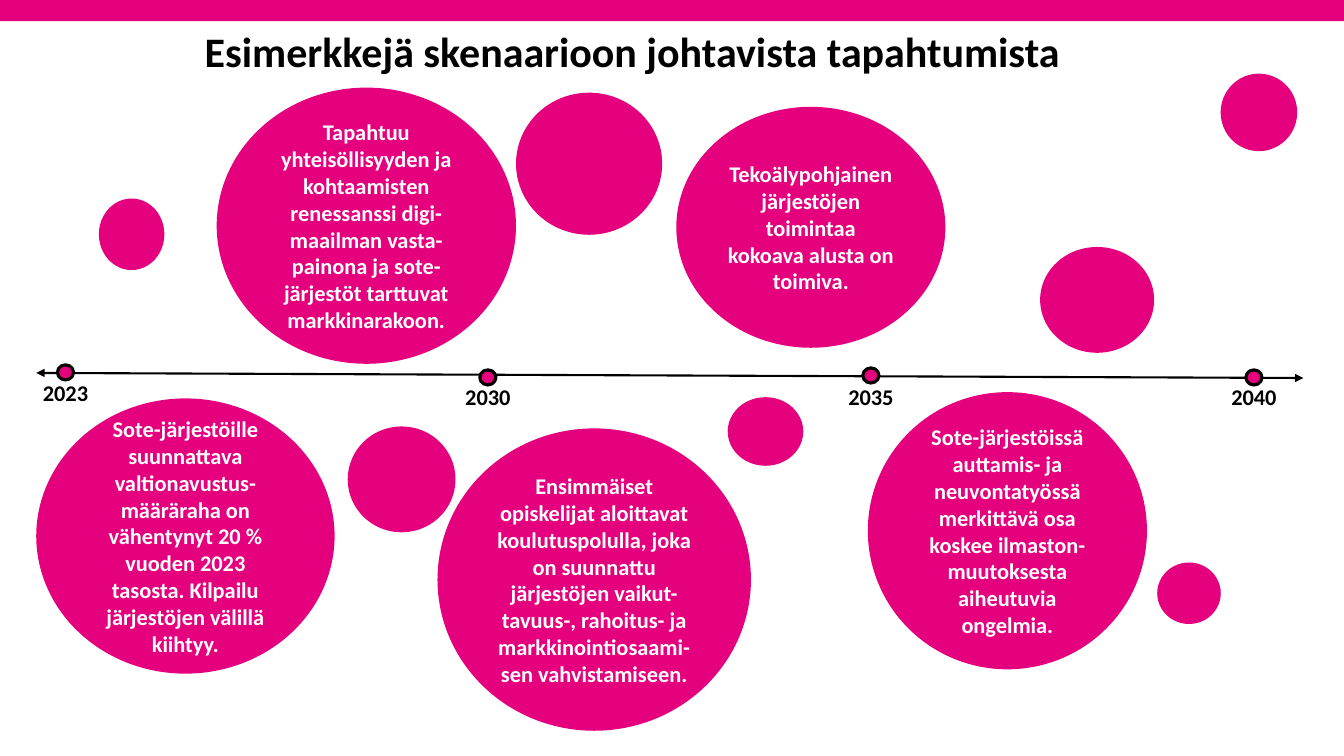
from pptx import Presentation
from pptx.dml.color import RGBColor
from pptx.enum.shapes import MSO_CONNECTOR, MSO_SHAPE
from pptx.enum.text import MSO_ANCHOR, PP_ALIGN
from pptx.oxml.ns import qn
from pptx.util import Pt
from lxml.etree import SubElement

PINK, BLACK, WHITE = "E5007D", "000000", "FFFFFF"


def color(value):
    return RGBColor.from_string(value)


class TimelineSlide:
    font_name = "Calibri"
    text_size = 16

    def __init__(self, presentation):
        self.slide = presentation.slides.add_slide(presentation.slide_layouts[5])

    def set_text(self, shape, text, size, text_color, alignment, anchor):
        text_frame = shape.text_frame
        text_frame.text = text
        text_frame.vertical_anchor = anchor
        text_frame.word_wrap = True
        paragraph = text_frame.paragraphs[0]
        paragraph.alignment = alignment
        font = paragraph.runs[0].font
        font.name, font.size, font.bold = self.font_name, Pt(size), True
        font.color.rgb = color(text_color)
        return paragraph

    def title(self, text, left, top, width, height):
        shape = self.slide.shapes.title
        shape.left, shape.top, shape.width, shape.height = map(Pt, (left, top, width, height))
        paragraph = self.set_text(shape, text, 30, BLACK, PP_ALIGN.LEFT, MSO_ANCHOR.TOP)
        paragraph.line_spacing = 0.9

    def filled(self, kind, left, top, width, height, outline=None):
        shape = self.slide.shapes.add_shape(kind, *map(Pt, (left, top, width, height)))
        shape.shadow.inherit = False
        shape.fill.solid()
        shape.fill.fore_color.rgb = color(PINK)
        if outline:
            shape.line.color.rgb = color(BLACK)
            shape.line.width = Pt(outline)
        else:
            shape.line.fill.background()
        return shape

    def band(self, width, height):
        self.filled(MSO_SHAPE.RECTANGLE, 0, 0, width, height)

    def bubble(self, left, top, width, height, text=None):
        shape = self.filled(MSO_SHAPE.OVAL, left, top, width, height)
        if text:
            self.set_text(shape, text, self.text_size, WHITE, PP_ALIGN.CENTER, MSO_ANCHOR.MIDDLE)

    def axis(self, start_x, start_y, end_x, end_y):
        connector = self.slide.shapes.add_connector(
            MSO_CONNECTOR.STRAIGHT, Pt(start_x), Pt(start_y), Pt(end_x), Pt(end_y))
        connector.line.color.rgb = color(BLACK)
        connector.line.width = Pt(1.5)
        properties = connector.element.spPr
        line = properties.find(qn("a:ln"))
        for end in ("a:headEnd", "a:tailEnd"):
            SubElement(line, qn(end), type="triangle")
        SubElement(properties, qn("a:effectLst"))

    def milestone(self, year, center, dot_top, label_top):
        dot_width, label_width = 11.5, 47.5
        self.filled(MSO_SHAPE.OVAL, center - dot_width / 2, dot_top, dot_width, 10.8, 2.25)
        label = self.slide.shapes.add_textbox(
            Pt(center - label_width / 2), Pt(label_top), Pt(label_width), Pt(26.6))
        self.set_text(label, year, self.text_size, BLACK, PP_ALIGN.CENTER, MSO_ANCHOR.TOP)
        label.text_frame.word_wrap = False


MILESTONES = [
    ("2023", 46.8, 260.6, 267.1),
    ("2030", 348.5, 264.2, 270),
    ("2035", 622.1, 262.8, 270),
    ("2040", 895.7, 264.2, 270),
]

EVENTS = [
    (25.9, 284.6, 213.1, 196.6,
     "Sote-järjestöille suunnattava valtionavustus-määräraha on vähentynyt 20 % "
     "vuoden 2023 tasosta. Kilpailu järjestöjen välillä kiihtyy."),
    (154.8, 62.6, 213.8, 197.3,
     "Tapahtuu yhteisöllisyyden ja kohtaamisten renessanssi digi-maailman "
     "vasta-painona ja sote-järjestöt tarttuvat markkinarakoon."),
    (312.5, 306, 223.9, 216,
     "Ensimmäiset opiskelijat aloittavat koulutuspolulla, joka on suunnattu "
     "järjestöjen vaikut-tavuus-, rahoitus- ja markkinointiosaami-sen vahvistamiseen."),
    (483.1, 76.3, 192.2, 172.1,
     "Tekoälypohjainen järjestöjen toimintaa kokoava alusta on toimiva."),
    (619.9, 280.1, 199.4, 198,
     "Sote-järjestöissä auttamis- ja neuvontatyössä merkittävä osa koskee "
     "ilmaston-muutoksesta aiheutuvia ongelmia."),
]

EMPTY_BUBBLES = [
    (70.6, 141.8, 46.8, 51.1),
    (248.4, 304.6, 77, 75.6),
    (368.6, 66.2, 104.4, 101.5),
    (519.8, 283.7, 54, 49),
    (743, 176.4, 81.4, 75.6),
    (871.9, 52.6, 54.7, 55.4),
    (826.6, 401.8, 45.4, 43.9),
]


def main():
    presentation = Presentation()
    presentation.slide_width, presentation.slide_height = Pt(960), Pt(540)
    timeline = TimelineSlide(presentation)
    timeline.band(960, 15.1)
    timeline.title("Esimerkkejä skenaarioon johtavista tapahtumista", 139, 18.7, 800, 75.6)
    timeline.axis(25.9, 266.4, 931, 270)
    for milestone in MILESTONES:
        timeline.milestone(*milestone)
    for event in EVENTS:
        timeline.bubble(*event)
    for bubble in EMPTY_BUBBLES:
        timeline.bubble(*bubble)
    presentation.save("out.pptx")


if __name__ == "__main__":
    main()
